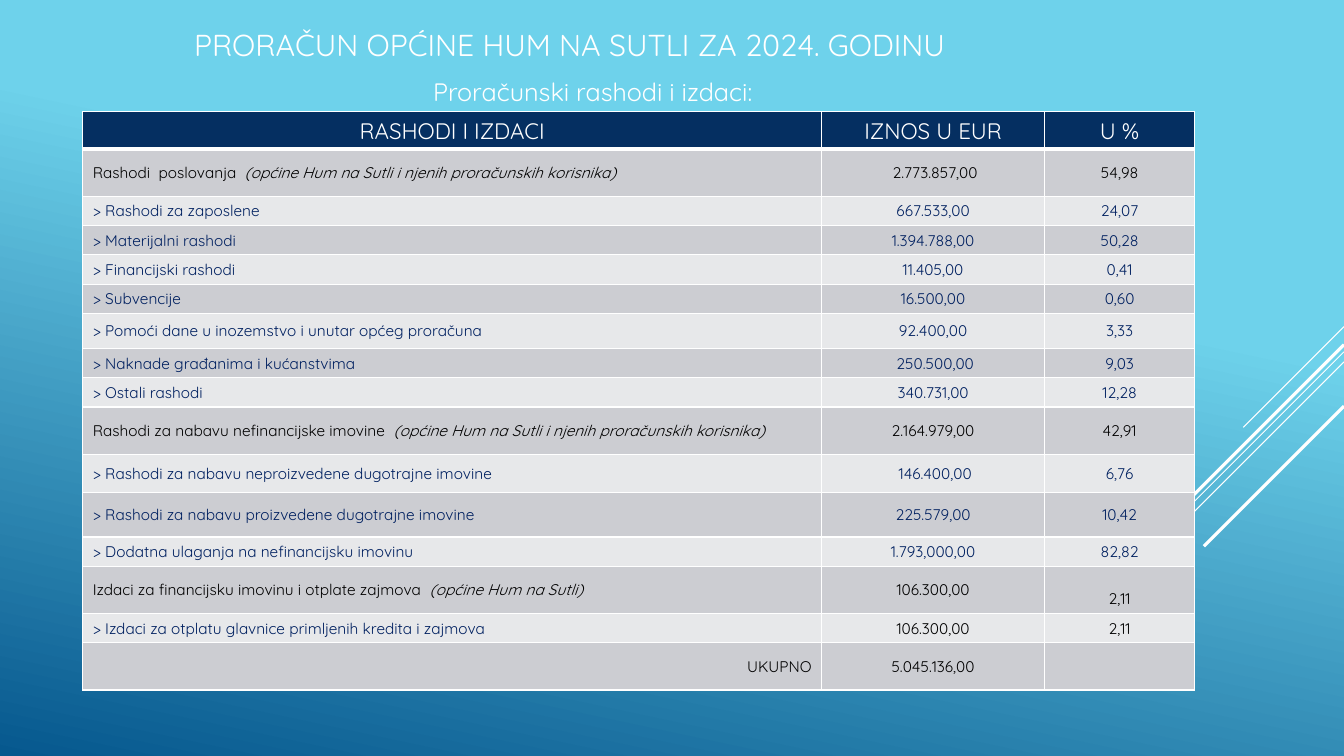
from dataclasses import dataclass
from lxml.etree import SubElement
from pptx import Presentation
from pptx.dml.color import RGBColor
from pptx.enum.shapes import MSO_CONNECTOR
from pptx.enum.text import MSO_ANCHOR as ANCHOR, PP_ALIGN as ALIGN
from pptx.oxml.ns import qn
from pptx.util import Inches, Pt

TITLE = "PRORAČUN OPĆINE HUM NA SUTLI ZA 2024. GODINU"
SUBTITLE = "Proračunski rashodi i izdaci:"
HEADER = ("RASHODI I IZDACI", "IZNOS U EUR", "U %")
USERS = "(općine Hum na Sutli i njenih proračunskih korisnika)"
TOTAL = "UKUPNO"
ROWS = [
    ("Rashodi  poslovanja  ", USERS, " 2.773.857,00", "54,98"),
    ("> Rashodi za zaposlene", "", "667.533,00", "24,07"),
    ("> Materijalni rashodi", "", "1.394.788,00", "50,28"),
    ("> Financijski rashodi", "", "11.405,00", "0,41"),
    ("> Subvencije", "", "16.500,00", "0,60"),
    ("> Pomoći dane u inozemstvo i unutar općeg proračuna", "", "92.400,00", "3,33"),
    ("> Naknade građanima i kućanstvima", "", " 250.500,00", "9,03"),
    ("> Ostali rashodi", "", "340.731,00", "12,28"),
    ("Rashodi za nabavu nefinancijske imovine  ", USERS, "2.164.979,00", "42,91"),
    ("> Rashodi za nabavu neproizvedene dugotrajne imovine", "", " 146.400,00", "6,76"),
    ("> Rashodi za nabavu proizvedene dugotrajne imovine", "", "225.579,00", "10,42"),
    ("> Dodatna ulaganja na nefinancijsku imovinu", "", "1.793,000,00", "82,82"),
    ("Izdaci za financijsku imovinu i otplate zajmova  ", "(općine Hum na Sutli)",
     "106.300,00", "2,11"),
    ("> Izdaci za otplatu glavnice primljenih kredita i zajmova", "", "106.300,00", "2,11"),
    (TOTAL, "", "5.045.136,00", ""),
]
FINANCING_ROW, REPAYMENT_ROW = 13, 14
COLUMNS = (7.33, 2.21, 1.49)
HEADER_HEIGHT, GROUP_HEIGHT, ITEM_HEIGHT = 0.37, 0.47, 0.29
TALL_ITEMS = {6: 0.35, 10: 0.38, 11: 0.44}
STRIPES = [(3.24, 1.0, 0.75), (3.49, 3.26, 0.75), (3.59, 2.07, 0.75),
           (3.42, 1.91, 2.25), (4.03, 1.39, 2.25)]


@dataclass(frozen=True)
class Theme:
    font: str = "Quicksand"
    sky: str = "6ED2EB"
    deep: str = "06588E"
    white: str = "FFFFFF"
    black: str = "000000"
    navy: str = "002060"
    header: str = "052F61"
    bands: tuple = ("E7E8EA", "CCCDD2")
    title: float = 21.6
    subtitle: float = 18
    heading: float = 16
    body: float = 11
    border: float = 1
    header_rule: float = 3


T = Theme()
rgb = RGBColor.from_string


def add_run(p, text, size, color, italic=False):
    r = p.add_run()
    r.text = text
    r.font.name, r.font.size, r.font.italic = T.font, Pt(size), italic
    r.font.color.rgb = rgb(color)


def add_text(slide, box, text, size, align, anchor):
    tf = slide.shapes.add_textbox(*map(Inches, box)).text_frame
    tf.word_wrap, tf.vertical_anchor = True, anchor
    p = tf.paragraphs[0]
    p.alignment = align
    add_run(p, text, size, T.white)


def add_stripe(slide, top, reach, width):
    right = prs.slide_width
    line = slide.shapes.add_connector(
        MSO_CONNECTOR.STRAIGHT, right, Inches(top), right - Inches(reach), Inches(top + reach))
    line.line.color.rgb, line.line.width = rgb(T.white), Pt(width)
    SubElement(line._element.spPr, qn("a:effectLst"))


def style_cell(cell, row, fill):
    tc_pr = cell._tc.get_or_add_tcPr()
    for side in "LRTB":
        thick = (row, side) in ((0, "B"), (1, "T"))
        width = T.header_rule if thick else T.border
        ln = SubElement(tc_pr, qn(f"a:ln{side}"), w=str(Pt(width)))
        SubElement(SubElement(ln, qn("a:solidFill")), qn("a:srgbClr"), val=T.white)
    cell.fill.solid()
    cell.fill.fore_color.rgb = rgb(fill)


def row_height(row, label):
    if row == 0:
        return HEADER_HEIGHT
    return TALL_ITEMS.get(row, ITEM_HEIGHT if label.startswith(">") else GROUP_HEIGHT)


def add_budget(slide):
    lines = [(HEADER[0], "", *HEADER[1:])] + ROWS
    heights = [row_height(i, line[0]) for i, line in enumerate(lines)]
    table = slide.shapes.add_table(
        len(lines), len(COLUMNS), Inches(0.82), Inches(1.11),
        Inches(sum(COLUMNS)), Inches(sum(heights))).table
    table.horz_banding = False
    for column, width in zip(table.columns, COLUMNS):
        column.width = Inches(width)
    for i, (label, note, *values) in enumerate(lines):
        table.rows[i].height = Inches(heights[i])
        for j, text in enumerate((label, *values)):
            cell = table.cell(i, j)
            style_cell(cell, i, T.bands[i % 2] if i else T.header)
            cell.vertical_anchor = ANCHOR.MIDDLE if i else ANCHOR.TOP
            if (i, j) == (FINANCING_ROW, 2):
                cell.vertical_anchor = ANCHOR.BOTTOM
            p = cell.text_frame.paragraphs[0]
            p.alignment = ALIGN.CENTER if j or i == 0 else ALIGN.LEFT
            if text == TOTAL:
                p.alignment = ALIGN.RIGHT
            item = label.startswith(">") and not (i == REPAYMENT_ROW and j)
            color = T.white if i == 0 else T.navy if item else T.black
            if text:
                add_run(p, text, T.body if i else T.heading, color)
            if note and j == 0:
                add_run(p, note, T.body, color, italic=True)


prs = Presentation()
prs.slide_width, prs.slide_height = Inches(13.33), Inches(7.5)
slide = prs.slides.add_slide(prs.slide_layouts[6])
background = slide.background.fill
background.gradient()
background.gradient_angle = 360 - 102
for stop, (position, color) in zip(background.gradient_stops, ((0.35, T.sky), (1, T.deep))):
    stop.position, stop.color.rgb = position, rgb(color)
for stripe in STRIPES:
    add_stripe(slide, *stripe)
add_text(slide, (1.01, 0.18, 9.28, 0.53), TITLE, T.title, ALIGN.CENTER, ANCHOR.MIDDLE)
add_text(slide, (2.47, 0.48, 5.09, 0.63), SUBTITLE, T.subtitle, ALIGN.RIGHT, ANCHOR.BOTTOM)
add_budget(slide)
prs.save("out.pptx")
